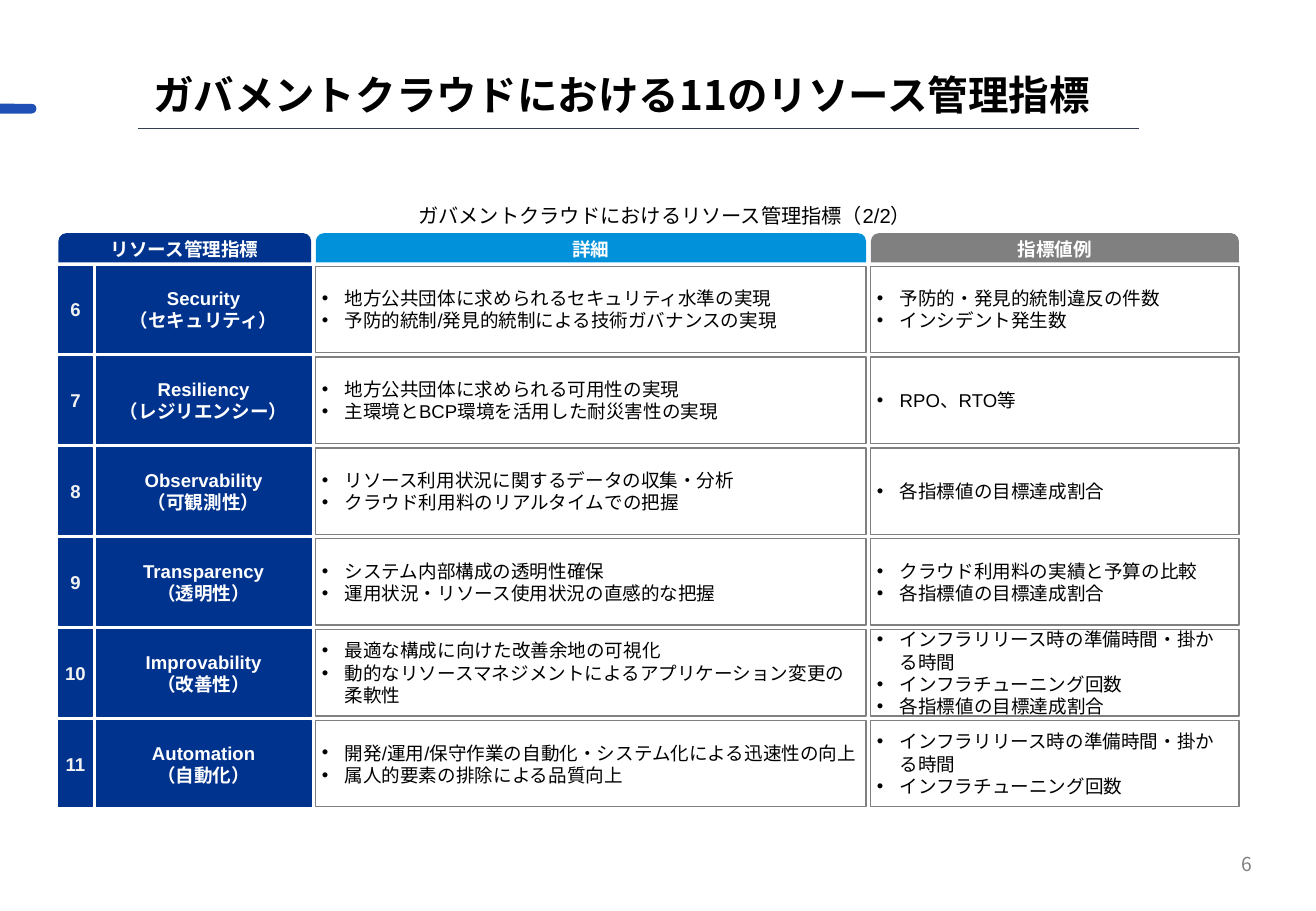
from lxml import etree
from pptx import Presentation
from pptx.dml.color import RGBColor
from pptx.enum.lang import MSO_LANGUAGE_ID
from pptx.enum.shapes import MSO_CONNECTOR, MSO_SHAPE
from pptx.enum.text import MSO_ANCHOR, MSO_AUTO_SIZE, PP_ALIGN
from pptx.oxml.ns import qn
from pptx.util import Pt

LEFT, CENTER, RIGHT = PP_ALIGN.LEFT, PP_ALIGN.CENTER, PP_ALIGN.RIGHT
MIDDLE = MSO_ANCHOR.MIDDLE
NO_AUTOFIT = MSO_AUTO_SIZE.NONE
JAPANESE = MSO_LANGUAGE_ID.JAPANESE
RECTANGLE = MSO_SHAPE.RECTANGLE
ROUNDED = MSO_SHAPE.ROUNDED_RECTANGLE
ROUND_TOP = MSO_SHAPE.ROUND_2_SAME_RECTANGLE
STRAIGHT = MSO_CONNECTOR.STRAIGHT

# Content
TITLE = "ガバメントクラウドにおける11のリソース管理指標"
CAPTION = "ガバメントクラウドにおけるリソース管理指標（2/2）"
PAGE_NUMBER = "6"
FIRST_INDICATOR = 6
INDICATORS = [
    ("Security\n（セキュリティ）",
     ["地方公共団体に求められるセキュリティ水準の実現",
      "予防的統制/発見的統制による技術ガバナンスの実現"],
     ["予防的・発見的統制違反の件数", "インシデント発生数"]),
    ("Resiliency\n（レジリエンシー）",
     ["地方公共団体に求められる可用性の実現",
      "主環境とBCP環境を活用した耐災害性の実現"],
     ["RPO、RTO等"]),
    ("Observability\n（可観測性）",
     ["リソース利用状況に関するデータの収集・分析",
      "クラウド利用料のリアルタイムでの把握"],
     ["各指標値の目標達成割合"]),
    ("Transparency\n（透明性）",
     ["システム内部構成の透明性確保",
      "運用状況・リソース使用状況の直感的な把握"],
     ["クラウド利用料の実績と予算の比較", "各指標値の目標達成割合"]),
    ("Improvability\n（改善性）",
     ["最適な構成に向けた改善余地の可視化",
      "動的なリソースマネジメントによるアプリケーション変更の柔軟性"],
     ["インフラリリース時の準備時間・掛かる時間",
      "インフラチューニング回数", "各指標値の目標達成割合"]),
    ("Automation\n（自動化）",
     ["開発/運用/保守作業の自動化・システム化による迅速性の向上",
      "属人的要素の排除による品質向上"],
     ["インフラリリース時の準備時間・掛かる時間",
      "インフラチューニング回数"]),
]

COLORS = {
    "navy": "00338D", "sky": "0091DA", "gray": "808080", "accent": "1E50B5",
    "rule": "333F50", "white": "FFFFFF", "pale": "F2F2F2", "black": "000000",
}
BODY_FONT, TITLE_FONT = "Arial", "Noto Sans CJK JP"

# Columns as (left, width), in points
NUMBER, NAME = (34.6, 20.2), (57, 127.5)
DETAIL, EXAMPLE = (187.2, 326.2), (516.2, 218.2)
NAME_HEADER = (NUMBER[0], NAME[0] + NAME[1] - NUMBER[0])
HEADERS = [
    ("リソース管理指標", NAME_HEADER, "navy"),
    ("詳細", DETAIL, "sky"),
    ("指標値例", EXAMPLE, "gray"),
]
HEADER_TOP, HEADER_HEIGHT = 138.2, 17.3
ROWS_TOP, ROW_HEIGHT, ROW_PITCH = 157.8, 51.1, 53.87
INSET, BULLET_INDENT = 3.6, 13.5


def color(name):
    return RGBColor.from_string(COLORS[name])


def write(shape, text, size, color_name, align=CENTER, bold=False,
          font=BODY_FONT, inset=INSET, wrap=True):
    frame = shape.text_frame
    frame.text = text
    frame.auto_size = NO_AUTOFIT
    frame.word_wrap = wrap
    frame.vertical_anchor = MIDDLE
    frame.margin_left = frame.margin_right = Pt(inset)
    frame.margin_top = frame.margin_bottom = Pt(inset)
    for paragraph in frame.paragraphs:
        paragraph.alignment = align
        for run in paragraph.runs:
            run.font.name = font
            run.font.size = Pt(size)
            run.font.bold = bold
            run.font.color.rgb = color(color_name)
            run.font.language_id = JAPANESE
            east_asian = etree.Element(qn("a:ea"), typeface=font)
            run.font._element.find(qn("a:latin")).addnext(east_asian)


def add_bullets(shape):
    for paragraph in shape.text_frame.paragraphs:
        properties = paragraph._p.get_or_add_pPr()
        properties.set("marL", str(Pt(BULLET_INDENT)))
        properties.set("indent", str(-Pt(BULLET_INDENT)))
        etree.SubElement(properties, qn("a:buFont"), typeface=BODY_FONT)
        etree.SubElement(properties, qn("a:buChar"), char="•")


def add_block(slide, kind, column, top, height, fill, line=None):
    left, width = column
    shape = slide.shapes.add_shape(kind, Pt(left), Pt(top), Pt(width), Pt(height))
    shape.shadow.inherit = False
    shape.fill.solid()
    shape.fill.fore_color.rgb = color(fill)
    if line:
        shape.line.color.rgb = color(line)
        shape.line.width = Pt(0.75)
    else:
        shape.line.fill.background()
    return shape


def add_heading(slide):
    # Accent bar, title and the rule below it
    bar = add_block(slide, ROUNDED, (-5.8, 27.4), 61.5, 5.8, "accent")
    bar.adjustments[0] = 0.5

    title = slide.shapes.title
    title.left, title.top = Pt(90.7), Pt(39.6)
    title.width, title.height = Pt(613.5), Pt(32.4)
    write(title, TITLE, 24, "black", LEFT, True, TITLE_FONT, 0)

    rule = slide.shapes.add_connector(STRAIGHT, Pt(82), Pt(76.2), Pt(675), Pt(76.2))
    rule.line.color.rgb = color("rule")
    rule.line.width = Pt(0.5)
    etree.SubElement(rule._element.spPr, qn("a:effectLst"))


def add_indicators(slide):
    # Column headers
    for text, column, fill in HEADERS:
        header = add_block(slide, ROUND_TOP, column, HEADER_TOP, HEADER_HEIGHT, fill)
        header.adjustments[0] = 0.284
        write(header, text, 11, "white", bold=True, inset=0, wrap=False)

    # Indicator rows
    for index, (name, details, examples) in enumerate(INDICATORS):
        top = ROWS_TOP + index * ROW_PITCH
        labels = [(str(FIRST_INDICATOR + index), NUMBER, "pale"),
                  (name, NAME, "white")]
        for text, column, text_color in labels:
            label = add_block(slide, RECTANGLE, column, top, ROW_HEIGHT, "navy", "navy")
            write(label, text, 11, text_color, bold=True)
        for items, column in [(details, DETAIL), (examples, EXAMPLE)]:
            cell = add_block(slide, RECTANGLE, column, top, ROW_HEIGHT, "white", "gray")
            write(cell, "\n".join(items), 11, "black", LEFT)
            add_bullets(cell)


def main():
    presentation = Presentation()
    presentation.slide_width, presentation.slide_height = Pt(780), Pt(540)
    slide = presentation.slides.add_slide(presentation.slide_layouts[5])
    add_heading(slide)
    add_indicators(slide)

    # Table caption and page number
    caption = slide.shapes.add_textbox(Pt(44), Pt(118.8), Pt(700), Pt(17.3))
    write(caption, CAPTION, 12, "black")
    number = slide.shapes.add_textbox(Pt(573.8), Pt(497.5), Pt(175.7), Pt(28.8))
    write(number, PAGE_NUMBER, 11.4, "gray", RIGHT, font=TITLE_FONT)
    number.text_frame.margin_right = Pt(7.2)

    presentation.save("out.pptx")


if __name__ == "__main__":
    main()
